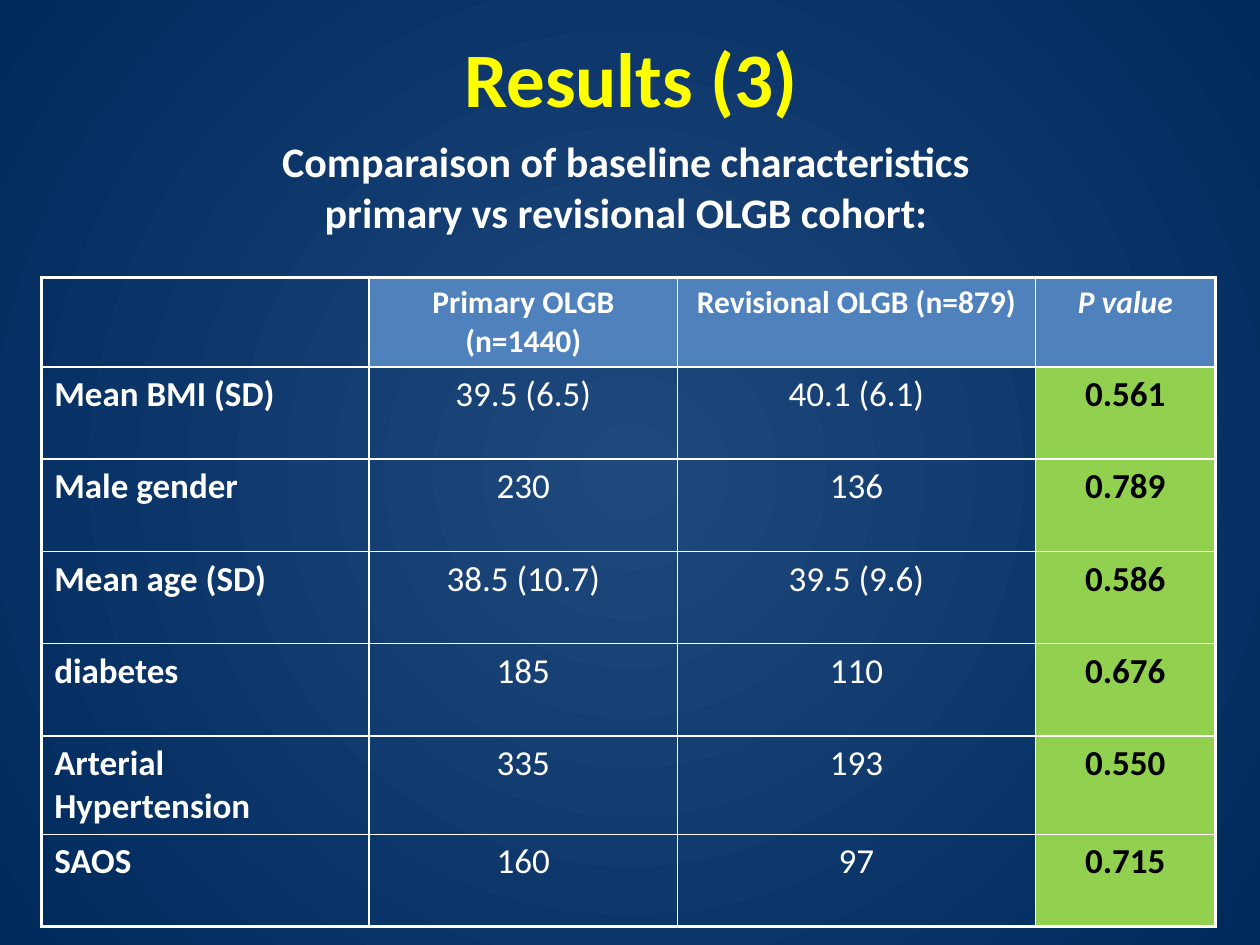
"""Builds the slide comparing baseline characteristics of two surgical cohorts."""
from lxml import etree
from pptx import Presentation, util as u
from pptx.dml.color import RGBColor
from pptx.enum import text
from pptx.oxml import ns

HEADING = "Results (3)"
SUBTITLE = "Comparaison of baseline characteristics\vprimary vs revisional OLGB cohort:"
ROWS = [
    ("", "Primary OLGB (n=1440)", "Revisional OLGB (n=879)", "P value"),
    ("Mean BMI (SD)", "39.5 (6.5)", "40.1 (6.1)", "0.561"),
    ("Male gender", "230", "136", "0.789"),
    ("Mean age (SD)", "38.5 (10.7)", "39.5 (9.6)", "0.586"),
    ("diabetes", "185", "110", "0.676"),
    ("Arterial Hypertension", "335", "193", "0.550"),
    ("SAOS", "160", "97", "0.715"),
]
COLUMN_WIDTHS = (6.6, 6.22, 7.21, 3.63)
HEADER_HEIGHT, ROW_HEIGHT = 1.63, 1.86
WHITE, BLACK, YELLOW = "FFFFFF", "000000", "FFFF00"
BLUE, GREEN = "4F81BD", "92D050"
BACKDROP = ("1F497D", "00295C")
THIN, THICK = 1, 2.25


def rgb(value):
    return RGBColor.from_string(value)


def style(para, size, color=WHITE, bold=True, italic=False, align=text.PP_ALIGN.CENTER):
    para.alignment = align
    font = para.font
    font.name, font.size, font.bold, font.italic = "Calibri", u.Pt(size), bold, italic
    font.color.rgb = rgb(color)


def write(shape, wording, size, color):
    frame = shape.text_frame
    frame.word_wrap = True
    frame.auto_size = text.MSO_AUTO_SIZE.NONE
    frame.vertical_anchor = text.MSO_ANCHOR.MIDDLE
    frame.text = wording
    style(frame.paragraphs[0], size, color)


def paint_background(slide):
    fill = slide.background.fill
    fill.gradient()
    for stop, color in zip(fill.gradient_stops, BACKDROP):
        stop.color.rgb = rgb(color)
    gradient = slide.element.find(".//" + ns.qn("a:gradFill"))
    gradient.remove(gradient.find(ns.qn("a:lin")))
    circle = etree.SubElement(gradient, ns.qn("a:path"), path="circle")
    etree.SubElement(circle, ns.qn("a:fillToRect"), dict.fromkeys("ltrb", "50000"))


def draw_borders(cell, widths):
    properties = cell._tc.get_or_add_tcPr()
    for side, width in widths.items():
        line = etree.SubElement(properties, ns.qn("a:ln" + side), w=str(u.Pt(width)))
        solid = etree.SubElement(line, ns.qn("a:solidFill"))
        etree.SubElement(solid, ns.qn("a:srgbClr"), val=WHITE)


def format_cell(cell, row, column):
    header, label = row == 0, column == 0
    last_row, last_column = row == len(ROWS) - 1, column == len(COLUMN_WIDTHS) - 1
    outer = {"L": label, "R": last_column, "T": header, "B": last_row}
    draw_borders(cell, {side: THICK if edge else THIN for side, edge in outer.items()})
    if header and not label:
        fill = BLUE
    else:
        fill = GREEN if last_column else None
    if fill:
        cell.fill.solid()
        cell.fill.fore_color.rgb = rgb(fill)
    else:
        cell.fill.background()
    cell.text = ROWS[row][column]
    style(
        cell.text_frame.paragraphs[0],
        size=18 if header else 20,
        color=BLACK if last_column and not header else WHITE,
        bold=header or label or last_column,
        italic=header and last_column,
        align=text.PP_ALIGN.LEFT if label else text.PP_ALIGN.CENTER,
    )


def add_comparison(slide):
    heights = [HEADER_HEIGHT] + [ROW_HEIGHT] * (len(ROWS) - 1)
    table = slide.shapes.add_table(
        len(ROWS), len(COLUMN_WIDTHS), u.Cm(0.84), u.Cm(5.59),
        u.Cm(sum(COLUMN_WIDTHS)), u.Cm(sum(heights))).table
    table.first_row = table.horz_banding = False
    for column, width in zip(table.columns, COLUMN_WIDTHS):
        column.width = u.Cm(width)
    for row, height in enumerate(heights):
        table.rows[row].height = u.Cm(height)
        for column in range(len(COLUMN_WIDTHS)):
            format_cell(table.cell(row, column), row, column)


def main():
    deck = Presentation()
    deck.slide_width, deck.slide_height = u.Cm(25.4), u.Cm(19.05)
    slide = deck.slides.add_slide(deck.slide_layouts[5])
    paint_background(slide)
    title = slide.shapes.title
    title.left, title.top, title.width, title.height = map(u.Cm, (-0.08, 2.16, 25.4, 3.18))
    write(title, SUBTITLE, 24, WHITE)
    add_comparison(slide)
    heading = slide.shapes.add_textbox(*map(u.Cm, (-0.3, -0.05, 25.4, 3.18)))
    heading.text_frame.margin_left = u.Cm(0.9)
    write(heading, HEADING, 44, YELLOW)
    deck.save("out.pptx")


if __name__ == "__main__":
    main()
